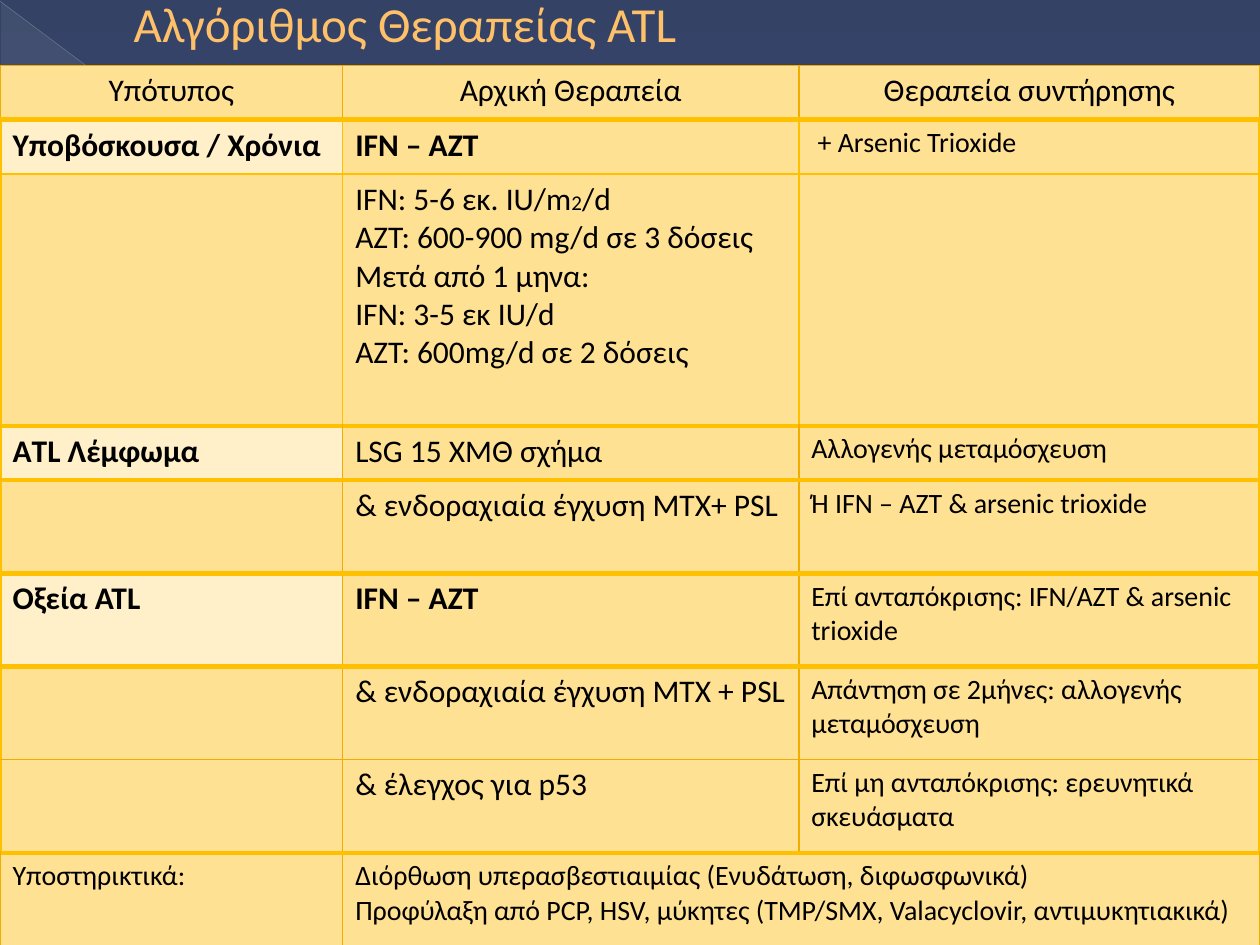
import lxml.etree
import pptx
import pptx.dml.color
import pptx.enum.shapes
import pptx.enum.text
import pptx.oxml.ns
import pptx.util

Inches = pptx.util.Inches
Pt = pptx.util.Pt
qn = pptx.oxml.ns.qn
color = pptx.dml.color.RGBColor.from_string

AMBER, GOLD = "F0AD00", "FFC000"
THIN, THIN_GOLD, THICK = (AMBER, 1), (GOLD, 1), (GOLD, 3)


def set_gradient(element, stops, angle):
    """Fill the element's gradient with (position, colour, opacity) stops, in percent."""
    gradient = element.find(".//" + qn("a:gradFill"))
    for child in list(gradient):
        gradient.remove(child)
    stop_list = lxml.etree.SubElement(gradient, qn("a:gsLst"))
    for position, hex_color, opacity in stops:
        stop = lxml.etree.SubElement(stop_list, qn("a:gs"), pos=str(position * 1000))
        stop_color = lxml.etree.SubElement(stop, qn("a:srgbClr"), val=hex_color)
        if opacity < 100:
            lxml.etree.SubElement(stop_color, qn("a:alpha"), val=str(opacity * 1000))
    lxml.etree.SubElement(gradient, qn("a:lin"), ang=str(angle * 60000), scaled="0")


def add_line(parent, tag, hex_color, width):
    """Add a solid line element, such as a cell border or a text outline."""
    line = lxml.etree.Element(qn(tag), w=str(Pt(width)))
    fill = lxml.etree.SubElement(line, qn("a:solidFill"))
    lxml.etree.SubElement(fill, qn("a:srgbClr"), val=hex_color)
    if tag == "a:ln":
        parent.insert(0, line)
    else:
        parent.append(line)


presentation = pptx.Presentation()
presentation.slide_width = Inches(10)
presentation.slide_height = Inches(7.5)
slide = presentation.slides.add_slide(presentation.slide_layouts[5])

# Background
slide.background.fill.gradient()
set_gradient(slide.element.find(".//" + qn("p:bg")),
             [(0, "334265", 100), (60, "445887", 100), (100, "6C7FB1", 100)], 90)

# Title
title = slide.shapes.title
title.left, title.top = Inches(0.43), Inches(0)
title.width, title.height = Inches(8.91), Inches(0.36)
frame = title.text_frame
frame.word_wrap = True
frame.auto_size = pptx.enum.text.MSO_AUTO_SIZE.NONE
frame.vertical_anchor = pptx.enum.text.MSO_ANCHOR.MIDDLE
paragraph = frame.paragraphs[0]
paragraph.alignment = pptx.enum.text.PP_ALIGN.LEFT
properties = paragraph._p.get_or_add_pPr()
properties.set("marL", str(Inches(0.53)))
properties.set("indent", "0")
run = paragraph.add_run()
run.text = "Αλγόριθμος Θεραπείας ATL"
run.font.size = Pt(28)
run.font.name = "Calibri"
run.font.color.rgb = color("FFC06A")
add_line(run.font._element, "a:ln", "A67800", 0.5)

# Decoration behind the title
triangle = slide.shapes.add_shape(pptx.enum.shapes.MSO_SHAPE.RIGHT_TRIANGLE,
                                  Inches(0.01), Inches(0.02), Inches(9.98), Inches(7.48))
triangle.shadow.inherit = False
triangle.line.fill.background()
triangle.fill.gradient()
set_gradient(triangle.element,
             [(0, "D4D4D6", 10), (70, "D4D4D6", 8), (100, "D4D4D6", 1)], 133)
title.element.addprevious(triangle.element)

for start, end, hex_color, width, opacity in [
    ((0, 0.01), (9.99, 7.49), "B9BDC8", 0.39, 35),
    ((10, 5.41), (7.07, 7.49), "C1C4CE", 0.47, 45),
]:
    connector = slide.shapes.add_connector(
        pptx.enum.shapes.MSO_CONNECTOR.STRAIGHT, *map(Inches, start + end))
    connector.line.width = Pt(width)
    connector.line.color.rgb = color(hex_color)
    line_color = connector.element.spPr.find(".//" + qn("a:srgbClr"))
    lxml.etree.SubElement(line_color, qn("a:alpha"), val=str(opacity * 1000))
    lxml.etree.SubElement(connector.element.spPr, qn("a:effectLst"))
    title.element.addprevious(connector.element)

# Treatment table: each cell is a list of paragraphs, each paragraph a list of runs
rows = [
    [[["Υπότυπος"]], [["Αρχική Θεραπεία"]], [["Θεραπεία συντήρησης"]]],
    [[["Υποβόσκουσα / Χρόνια"]], [["IFN – AZT"]], [[" + Arsenic Trioxide"]]],
    [[],
     [["IFN: 5-6 εκ. IU/m", "2", "/d"], ["AZT: 600-900 mg/d σε 3 δόσεις"],
      ["Μετά από 1 μηνα:"], ["IFN: 3-5 εκ IU/d"], ["AZT: 600mg/d σε 2 δόσεις"]],
     []],
    [[["ΑTL Λέμφωμα"]], [["LSG 15 ΧΜΘ σχήμα"]], [["Αλλογενής μεταμόσχευση"]]],
    [[], [["& ενδοραχιαία έγχυση MTX+ PSL"]], [["Ή IFN – AZT & arsenic trioxide"]]],
    [[["Οξεία ATL"]], [["IFN – AZT"]],
     [["Επί ανταπόκρισης: ΙFN/AZT & arsenic trioxide"]]],
    [[], [["& ενδοραχιαία έγχυση MTX + PSL"]],
     [["Απάντηση σε 2μήνες: αλλογενής μεταμόσχευση"]]],
    [[], [["& έλεγχος για p53"]], [["Επί μη ανταπόκρισης: ερευνητικά σκευάσματα"]]],
    [[["Υποστηρικτικά:"]],
     [["Διόρθωση υπερασβεστιαιμίας (Ενυδάτωση, διφωσφωνικά)"],
      ["Προφύλαξη από PCP, HSV, μύκητες (TMP/SMX, Valacyclovir, αντιμυκητιακικά)"]],
     []],
]
column_widths = [2.72, 3.62, 3.66]
row_heights = [0.43, 0.43, 2, 0.43] + [0.74] * 5
row_lines = [THIN, THICK, THIN_GOLD, THICK, THICK, THICK, THICK, THIN, THICK, THIN]
subtype_rows = (1, 3, 5)
last_row = len(rows) - 1

table = slide.shapes.add_table(len(rows), len(column_widths), Inches(0), Inches(0.52),
                               Inches(10), Inches(sum(row_heights))).table
table.first_row = False
table.horz_banding = False
for column, width in zip(table.columns, column_widths):
    column.width = Inches(width)
for row, height in zip(table.rows, row_heights):
    row.height = Inches(height)
table.cell(last_row, 1).merge(table.cell(last_row, 2))

for row_index, row in enumerate(rows):
    outer_line = THIN if row_index in (0, last_row) else THICK
    inner_line = THIN_GOLD if row_index in (1, 2) else THIN
    column_lines = [outer_line, inner_line, inner_line, outer_line]
    for column_index, paragraphs in enumerate(row):
        cell = table.cell(row_index, column_index)
        cell_properties = cell._tc.get_or_add_tcPr()
        for tag, line in [("a:lnL", column_lines[column_index]),
                          ("a:lnR", column_lines[column_index + 1]),
                          ("a:lnT", row_lines[row_index]),
                          ("a:lnB", row_lines[row_index + 1])]:
            add_line(cell_properties, tag, *line)
        is_subtype = row_index in subtype_rows and column_index == 0
        cell.fill.solid()
        cell.fill.fore_color.rgb = color("FFF0C9" if is_subtype else "FFE193")

        is_small = row_index == last_row or (column_index == 2 and row_index > 0)
        for index, runs in enumerate(paragraphs):
            frame = cell.text_frame
            paragraph = frame.paragraphs[0] if index == 0 else frame.add_paragraph()
            if row_index == 0:
                paragraph.alignment = pptx.enum.text.PP_ALIGN.CENTER
            for text in runs:
                run = paragraph.add_run()
                run.text = text
                run.font.name = "Calibri"
                run.font.size = Pt(12 if text == "2" else 16 if is_small else 18)
                run.font.bold = is_subtype or text == "IFN – AZT"
                run.font.color.rgb = color("000000")

presentation.save("out.pptx")
